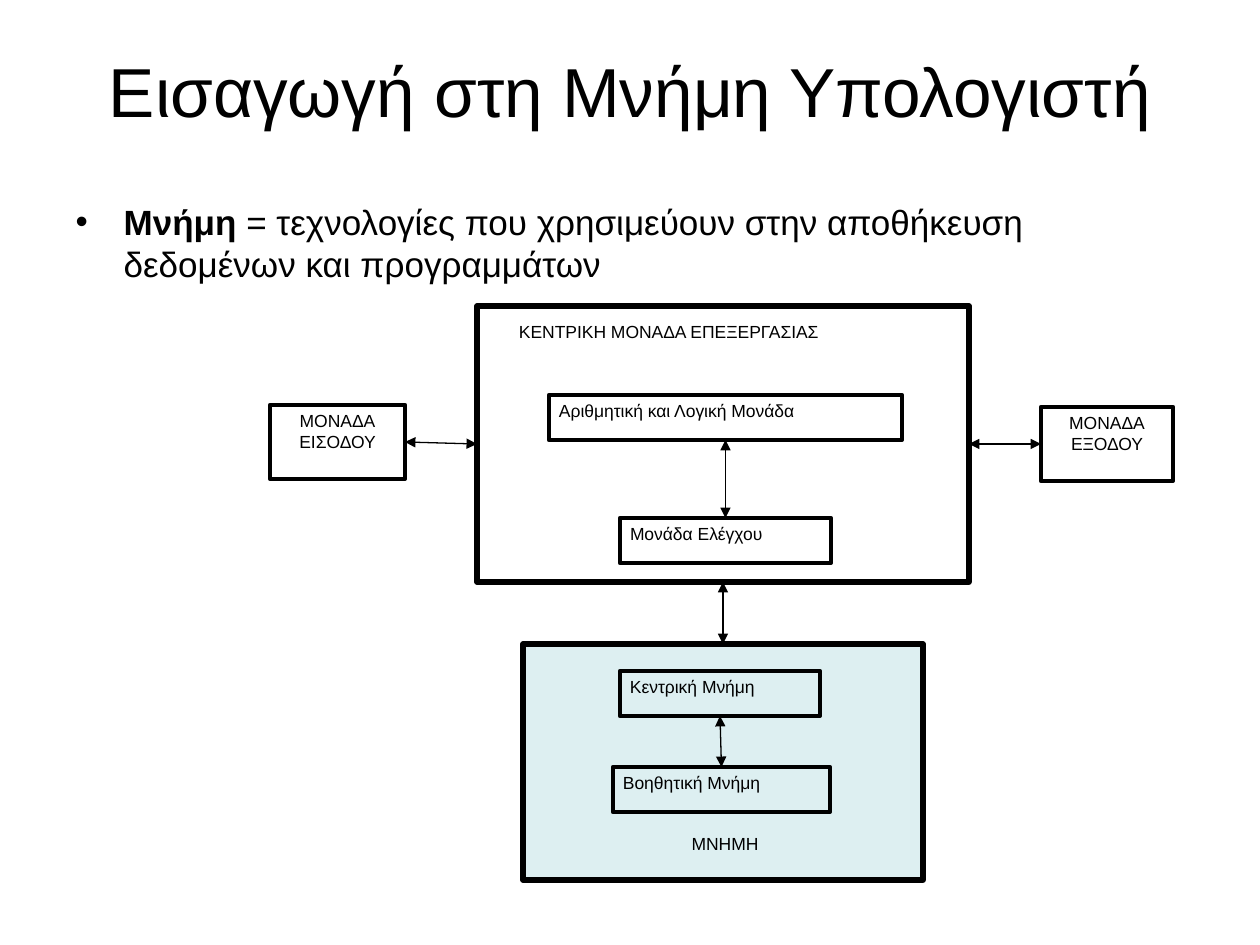
from lxml import etree
from pptx import Presentation
from pptx import util as u
from pptx.dml.color import RGBColor
from pptx.enum import shapes, text
from pptx.oxml.ns import qn

BLACK = RGBColor(0x00, 0x00, 0x00)
PALE_TEAL = RGBColor(0xBB, 0xE0, 0xE3)
FONT = "Arial"
PX = 914400 / 126
LEFT, CENTER = text.PP_ALIGN.LEFT, text.PP_ALIGN.CENTER


def px(*lengths):
    return [u.Emu(round(length * PX)) for length in lengths]


def write_label(box, label, align):
    """Fill a diagram box with one paragraph per line of the label."""
    frame = box.text_frame
    frame.word_wrap = True
    frame.vertical_anchor = text.MSO_ANCHOR.TOP
    frame.margin_left, frame.margin_top, frame.margin_right, frame.margin_bottom = px(10, 5, 10, 5)
    frame.text = label
    for paragraph in frame.paragraphs:
        paragraph.alignment = align
        paragraph.font.name = FONT
        paragraph.font.size = u.Pt(10)
        paragraph.font.color.rgb = BLACK


prs = Presentation()
prs.slide_width, prs.slide_height = px(1260, 945)
slide = prs.slides.add_slide(prs.slide_layouts[1])

# Title
title = slide.shapes.title
title.left, title.top, title.width, title.height = px(63, 38, 1134, 103)
title.text_frame.text = "Εισαγωγή στη Μνήμη Υπολογιστή"
title.text_frame.auto_size = text.MSO_AUTO_SIZE.NONE
title.text_frame.vertical_anchor = text.MSO_ANCHOR.MIDDLE
heading = title.text_frame.paragraphs[0]
heading.alignment = CENTER
heading.font.name = FONT
heading.font.size = u.Pt(39.6)
heading.font.color.rgb = BLACK

# Definition
body = slide.placeholders[1]
body.left, body.top, body.width, body.height = px(63, 194, 1134, 96)
body.text_frame.auto_size = text.MSO_AUTO_SIZE.NONE
definition = body.text_frame.paragraphs[0]
indent = px(48)[0]
properties = definition._p.get_or_add_pPr()
properties.set("marL", str(indent))
properties.set("indent", str(-indent))
etree.SubElement(properties, qn("a:buChar"), char="•")
definition.space_before = u.Pt(0)
definition.font.name = FONT
definition.font.size = u.Pt(20)
definition.font.color.rgb = BLACK
term = definition.add_run()
term.text = "Μνήμη"
term.font.bold = True
definition.add_run().text = " = τεχνολογίες που χρησιμεύουν στην αποθήκευση δεδομένων και προγραμμάτων"

# Units: left, top, width, height, line width, label, alignment
units = {
    "cpu": (477, 306, 492, 276, 3, "", LEFT),
    "memory": (523, 644, 400, 236, 3, "", LEFT),
    "alu": (549, 395, 353, 45, 2.5, "Αριθμητική και Λογική Μονάδα", LEFT),
    "control": (620, 518, 211, 45, 2.5, "Μονάδα Ελέγχου", LEFT),
    "main": (620, 671, 200, 45, 2.5, "Κεντρική Μνήμη", LEFT),
    "auxiliary": (613, 767, 217, 45, 2.5, "Βοηθητική Μνήμη", LEFT),
    "input": (270, 405, 135, 74, 2.5, "ΜΟΝΑΔΑ\nΕΙΣΟΔΟΥ", CENTER),
    "output": (1041, 407, 132, 74, 2.5, "ΜΟΝΑΔΑ\nΕΞΟΔΟΥ", CENTER),
}
boxes = {}
for unit, (left, top, width, height, line_width, label, align) in units.items():
    box = slide.shapes.add_shape(shapes.MSO_SHAPE.RECTANGLE, *px(left, top, width, height))
    box.shadow.inherit = False
    box.fill.background()
    box.line.color.rgb = BLACK
    box.line.width = u.Pt(line_width)
    if label:
        write_label(box, label, align)
    boxes[unit] = box

memory_fill = boxes["memory"].fill
memory_fill.solid()
memory_fill.fore_color.rgb = PALE_TEAL
memory_color = boxes["memory"]._element.spPr.find(qn("a:solidFill"))[0]
etree.SubElement(memory_color, qn("a:alpha"), val="49000")

# Captions of the two large units
for left, top, width, height, caption, align in (
    (509, 316, 440, 42, "ΚΕΝΤΡΙΚΗ ΜΟΝΑΔΑ ΕΠΕΞΕΡΓΑΣΙΑΣ", LEFT),
    (667, 828, 116, 42, "ΜΝΗΜΗ", CENTER),
):
    write_label(slide.shapes.add_textbox(*px(left, top, width, height)), caption, align)

# Two-way data flows between sides (0 top, 1 left, 2 bottom, 3 right)
for source, source_side, target, target_side in (
    ("alu", 2, "control", 0),
    ("main", 2, "auxiliary", 0),
    ("memory", 0, "cpu", 2),
    ("input", 3, "cpu", 1),
    ("cpu", 3, "output", 1),
):
    flow = slide.shapes.add_connector(shapes.MSO_CONNECTOR.STRAIGHT, 0, 0, 0, 0)
    flow.begin_connect(boxes[source], source_side)
    flow.end_connect(boxes[target], target_side)
    flow.line.color.rgb = BLACK
    flow.line.width = u.Pt(0.75)
    for end in ("a:headEnd", "a:tailEnd"):
        etree.SubElement(flow.line._get_or_add_ln(), qn(end), type="triangle")
    etree.SubElement(flow._element.spPr, qn("a:effectLst"))

prs.save("out.pptx")
